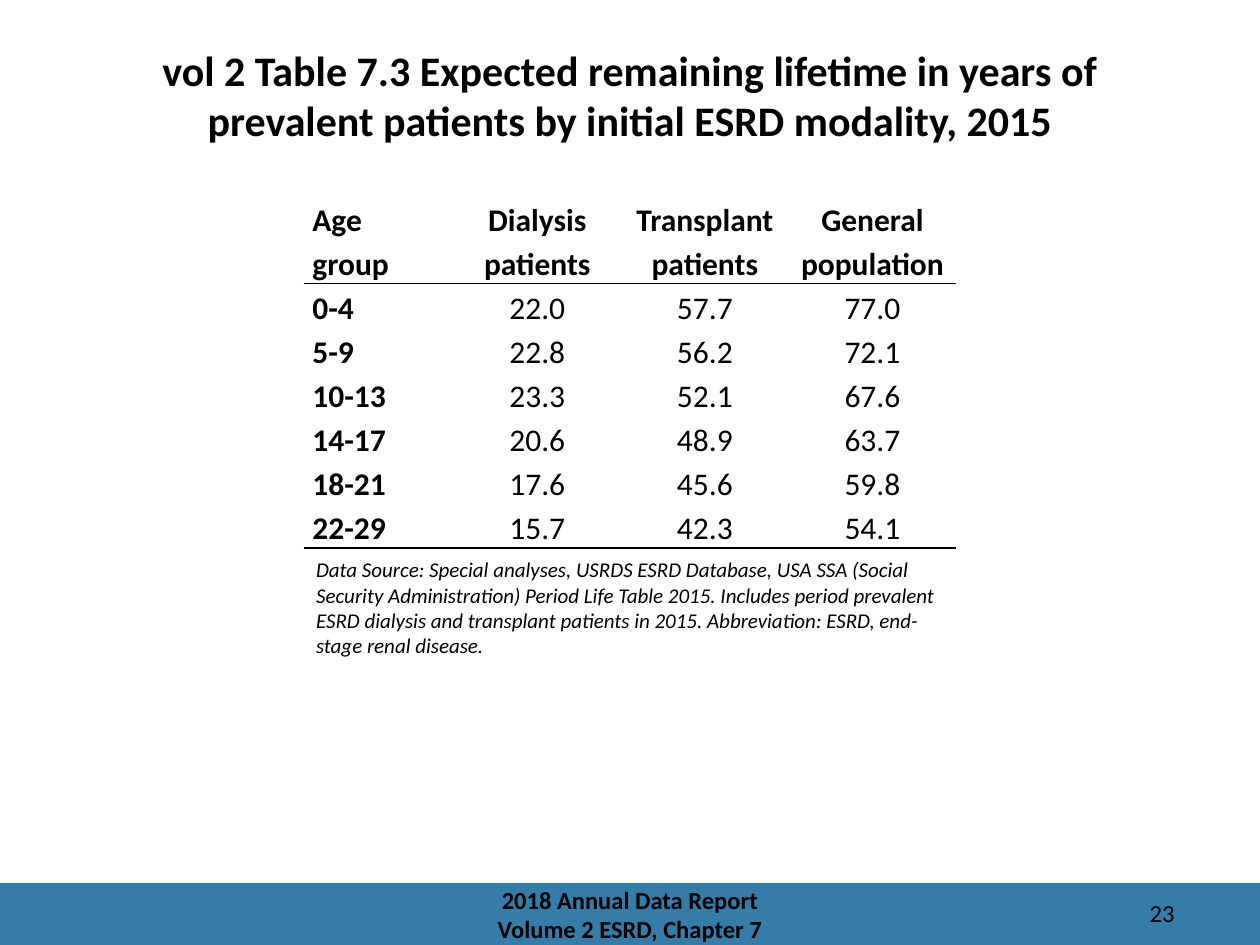
from lxml.etree import SubElement
from pptx import Presentation
from pptx.dml.color import RGBColor
from pptx.enum.shapes import MSO_SHAPE
from pptx.enum.text import MSO_ANCHOR, PP_ALIGN
from pptx.oxml.ns import qn
from pptx.util import Inches, Pt

COLORS = {"text": "000000", "band": "367CA8", "rule": "000000"}
FONT = "Calibri"

TITLE = ("vol 2 Table 7.3 Expected remaining lifetime in years of "
         "prevalent patients by initial ESRD modality, 2015")
SOURCE_NOTE = (
    "Data Source: Special analyses, USRDS ESRD Database, USA SSA (Social "
    "Security Administration) Period Life Table 2015. Includes period prevalent "
    "ESRD dialysis and transplant patients in 2015. Abbreviation: ESRD, "
    "end-stage renal disease."
)
REPORT_NAME = "2018 Annual Data Report\vVolume 2 ESRD, Chapter 7"
LIFETIMES = [
    ("Age group", "Dialysis patients", "Transplant patients", "General population"),
    ("0-4", "22.0", "57.7", "77.0"),
    ("5-9", "22.8", "56.2", "72.1"),
    ("10-13", "23.3", "52.1", "67.6"),
    ("14-17", "20.6", "48.9", "63.7"),
    ("18-21", "17.6", "45.6", "59.8"),
    ("22-29", "15.7", "42.3", "54.1"),
]


def style_text(frame, size, align, bold=False, italic=False):
    for paragraph in frame.paragraphs:
        paragraph.alignment = align
        for run in paragraph.runs:
            font = run.font
            font.name, font.size = FONT, Pt(size)
            font.bold, font.italic = bold, italic
            font.color.rgb = RGBColor.from_string(COLORS["text"])


def add_text(slide, text, box, size, align=PP_ALIGN.LEFT, anchor=MSO_ANCHOR.TOP,
             **emphasis):
    frame = slide.shapes.add_textbox(*map(Inches, box)).text_frame
    frame.word_wrap = True
    frame.vertical_anchor = anchor
    frame.text = text
    style_text(frame, size, align, **emphasis)


def add_band(slide):
    band = slide.shapes.add_shape(
        MSO_SHAPE.RECTANGLE, 0, Inches(7.01), Inches(10), Inches(0.5))
    band.shadow.inherit = False
    band.fill.solid()
    band.fill.fore_color.rgb = RGBColor.from_string(COLORS["band"])
    band.line.fill.background()


def set_rules(cell, ruled_edges):
    """Draw a 1 pt rule on the given edges and leave the other edges bare."""
    properties = cell._tc.get_or_add_tcPr()
    for position, edge in enumerate(("lnL", "lnR", "lnT", "lnB")):
        line = properties.makeelement(qn(f"a:{edge}"), {"w": str(Pt(1))})
        properties.insert(position, line)
        if edge in ruled_edges:
            fill = SubElement(line, qn("a:solidFill"))
            SubElement(fill, qn("a:srgbClr"), val=COLORS["rule"])
        else:
            SubElement(line, qn("a:noFill"))


def fill_cell(cell, text, is_label, is_header):
    cell.fill.background()
    cell.vertical_anchor = MSO_ANCHOR.MIDDLE
    cell.margin_left = cell.margin_right = Inches(0.07)
    cell.margin_top = cell.margin_bottom = 0
    cell.text_frame.text = text
    cell.text_frame.paragraphs[0].line_spacing = 1.15
    style_text(cell.text_frame, 18,
               PP_ALIGN.LEFT if is_label else PP_ALIGN.CENTER,
               bold=is_label or is_header)


def add_lifetime_table(slide):
    last_row = len(LIFETIMES) - 1
    table = slide.shapes.add_table(
        len(LIFETIMES), len(LIFETIMES[0]),
        Inches(2.41), Inches(1.55), Inches(5.19), Inches(2.8)).table
    table.first_row = table.horz_banding = False
    for number, column in enumerate(table.columns):
        column.width = Inches(1.33 if number else 1.19)
    for r, values in enumerate(LIFETIMES):
        table.rows[r].height = Inches(0.35 if r else 0.7)
        ruled_edges = {0: ("lnB",), 1: ("lnT",), last_row: ("lnB",)}.get(r, ())
        for c, value in enumerate(values):
            cell = table.cell(r, c)
            fill_cell(cell, value, is_label=c == 0, is_header=r == 0)
            set_rules(cell, ruled_edges)


def main():
    prs = Presentation()
    prs.slide_width, prs.slide_height = Inches(10), Inches(7.5)
    slide = prs.slides.add_slide(prs.slide_layouts[6])

    add_band(slide)
    add_text(slide, "23", (8.42, 7.08, 1, 0.3), 14, PP_ALIGN.RIGHT)
    add_text(slide, TITLE, (0.5, 0.3, 9, 1.25), 24, PP_ALIGN.CENTER, bold=True)
    add_text(slide, REPORT_NAME, (3.31, 7.01, 3.38, 0.49), 14, PP_ALIGN.CENTER,
             MSO_ANCHOR.MIDDLE, bold=True)
    add_lifetime_table(slide)
    add_text(slide, SOURCE_NOTE, (2.41, 4.37, 5.19, 0.91), 12, italic=True)

    prs.save("out.pptx")


if __name__ == "__main__":
    main()
